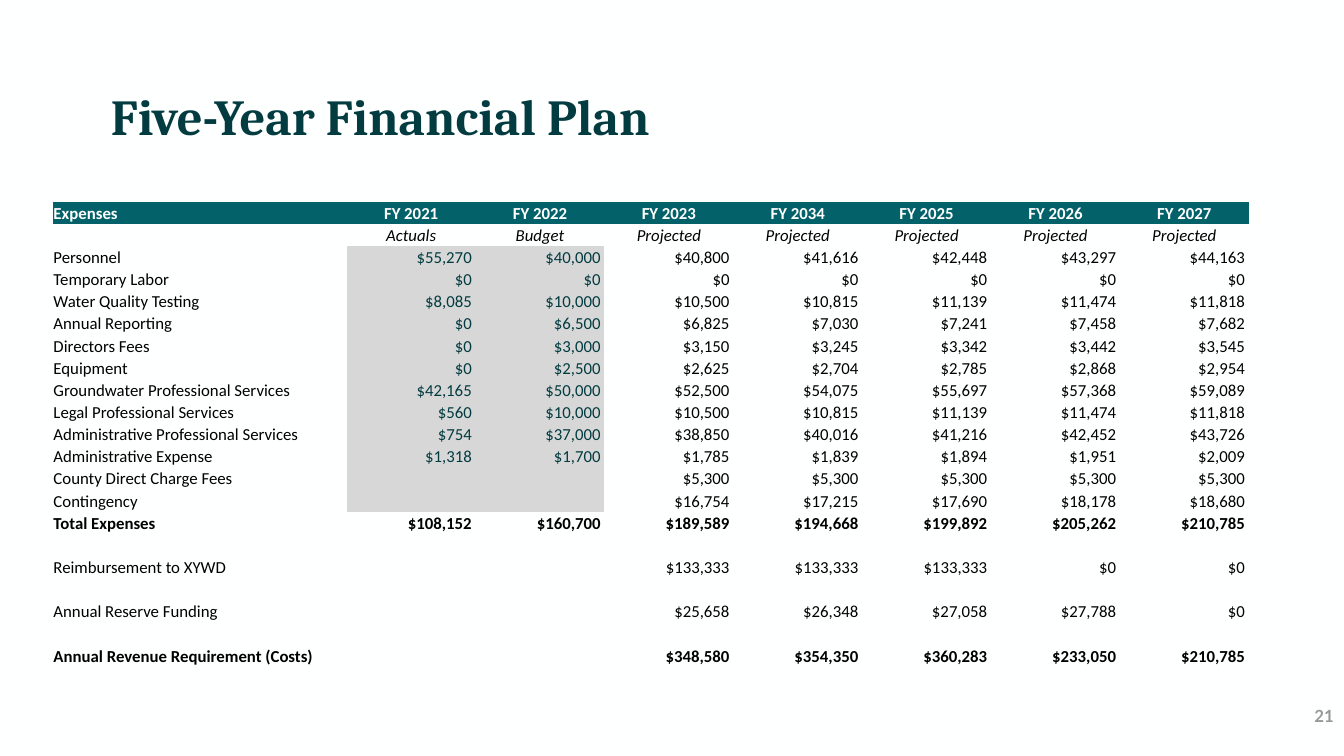
from lxml import etree
from pptx import Presentation
from pptx.dml.color import RGBColor
from pptx.enum.text import MSO_ANCHOR as Anchor, MSO_AUTO_SIZE as Fit, PP_ALIGN as Align
from pptx.oxml.ns import qn
from pptx.util import Pt

PAPER = RGBColor(0xFE, 0xFF, 0xFF)
DARK = RGBColor(0x02, 0x3B, 0x40)
TEAL = RGBColor(0x03, 0x62, 0x69)
SHADE = RGBColor(0xD7, 0xD7, 0xD7)
GRAY = RGBColor(0x96, 0x99, 0x99)
BLACK = RGBColor(0, 0, 0)
WHITE = RGBColor(0xFF, 0xFF, 0xFF)

PLAIN_STYLE = "{2D5ABB26-0587-4C30-8999-92F81FD0307C}"
ROW_H = 15.84
COLS = [209.5] + [92.05] * 7
PAST = (1, 2)  # actuals and budget columns

YEARS = ["FY 2021", "FY 2022", "FY 2023", "FY 2034", "FY 2025", "FY 2026", "FY 2027"]
KINDS = ["Actuals", "Budget"] + ["Projected"] * 5
COSTS = [
    ("Personnel", 55270, 40000, 40800, 41616, 42448, 43297, 44163),
    ("Temporary Labor", 0, 0, 0, 0, 0, 0, 0),
    ("Water Quality Testing", 8085, 10000, 10500, 10815, 11139, 11474, 11818),
    ("Annual Reporting", 0, 6500, 6825, 7030, 7241, 7458, 7682),
    ("Directors Fees", 0, 3000, 3150, 3245, 3342, 3442, 3545),
    ("Equipment", 0, 2500, 2625, 2704, 2785, 2868, 2954),
    ("Groundwater Professional Services", 42165, 50000, 52500, 54075, 55697, 57368, 59089),
    ("Legal Professional Services", 560, 10000, 10500, 10815, 11139, 11474, 11818),
    ("Administrative Professional Services", 754, 37000, 38850, 40016, 41216, 42452, 43726),
    ("Administrative Expense", 1318, 1700, 1785, 1839, 1894, 1951, 2009),
    ("County Direct Charge Fees", None, None, 5300, 5300, 5300, 5300, 5300),
    ("Contingency", None, None, 16754, 17215, 17690, 18178, 18680),
]
TOTAL = ("Total Expenses", 108152, 160700, 189589, 194668, 199892, 205262, 210785)
REPAY = ("Reimbursement to XYWD", None, None, 133333, 133333, 133333, 0, 0)
FUND = ("Annual Reserve Funding", None, None, 25658, 26348, 27058, 27788, 0)
NEED = ("Annual Revenue Requirement (Costs)", None, None,
        348580, 354350, 360283, 233050, 210785)
BLANK = ("",) + (None,) * 7


def write(frame, text, size=12, face="Calibri", color=BLACK, bold=False,
          italic=False, align=Align.LEFT):
    para = frame.paragraphs[0]
    para.alignment = align
    if not text:
        # An empty cell keeps the row low only with a small end mark
        etree.SubElement(para._p, qn("a:endParaRPr"), sz=str(size * 100))
        return
    run = para.add_run()
    run.text = text
    font = run.font
    font.size, font.name, font.bold, font.italic = Pt(size), face, bold, italic
    font.color.rgb = color


def fill_cell(cell, text, fill=None, **form):
    cell.margin_left = cell.margin_right = cell.margin_top = cell.margin_bottom = 0
    cell.vertical_anchor = Anchor.BOTTOM
    if fill is None:
        cell.fill.background()
    else:
        cell.fill.solid()
        cell.fill.fore_color.rgb = fill
    write(cell.text_frame, text, **form)


def fill_row(table, row, texts, align, fill=None, **form):
    for col, text in enumerate(texts):
        side = align if col else Align.LEFT
        fill_cell(table.cell(row, col), text, fill, align=side, **form)


def fill_sums(table, row, sums, shade=False, bold=False):
    for col, item in enumerate(sums):
        if col == 0:
            fill_cell(table.cell(row, col), item, bold=bold)
            continue
        text = "" if item is None else f"${item:,} "
        past = shade and col in PAST
        fill_cell(table.cell(row, col), text, SHADE if past else None, bold=bold,
                  color=DARK if past else BLACK, align=Align.RIGHT)


def add_title(slide, text):
    title = slide.shapes.title
    title.left, title.top, title.width, title.height = Pt(79.2), Pt(46), Pt(801.4), Pt(98.6)
    frame = title.text_frame
    frame.auto_size = Fit.NONE
    frame.word_wrap = True
    frame.vertical_anchor = Anchor.TOP
    frame.margin_left = frame.margin_right = frame.margin_bottom = 0
    frame.margin_top = Pt(15)
    write(frame, text, size=36, face="Cambria", color=DARK, bold=True)


def add_page(slide, text):
    box = slide.shapes.add_textbox(Pt(797.8), Pt(496.8), Pt(162), Pt(28.8))
    frame = box.text_frame
    frame.word_wrap = True
    frame.vertical_anchor = Anchor.MIDDLE
    write(frame, text, face="Lato", color=GRAY, bold=True, align=Align.RIGHT)


def add_plan(slide):
    tail = [TOTAL, BLANK, REPAY, BLANK, FUND, BLANK, NEED]
    count = 2 + len(COSTS) + len(tail)
    table = slide.shapes.add_table(count, len(COLS), Pt(38.2), Pt(144),
                                   Pt(sum(COLS)), Pt(ROW_H * count)).table
    table.first_row = table.horz_banding = False
    table._tbl.tblPr.find(qn("a:tableStyleId")).text = PLAIN_STYLE
    for col, width in zip(table.columns, COLS):
        col.width = Pt(width)
    for row in table.rows:
        row.height = Pt(ROW_H)

    # Heading rows
    fill_row(table, 0, ["Expenses"] + YEARS, Align.CENTER, TEAL, color=WHITE, bold=True)
    fill_row(table, 1, [""] + KINDS, Align.CENTER, italic=True)
    # Cost rows, then totals
    for row, sums in enumerate(COSTS + tail, 2):
        fill_sums(table, row, sums, shade=sums in COSTS, bold=sums in (TOTAL, NEED))


def main():
    deck = Presentation()
    deck.slide_width, deck.slide_height = Pt(960), Pt(540)
    slide = deck.slides.add_slide(deck.slide_layouts[5])
    slide.background.fill.solid()
    slide.background.fill.fore_color.rgb = PAPER
    add_title(slide, "Five-Year Financial Plan")
    add_page(slide, "21")
    add_plan(slide)
    deck.save("out.pptx")


if __name__ == "__main__":
    main()
